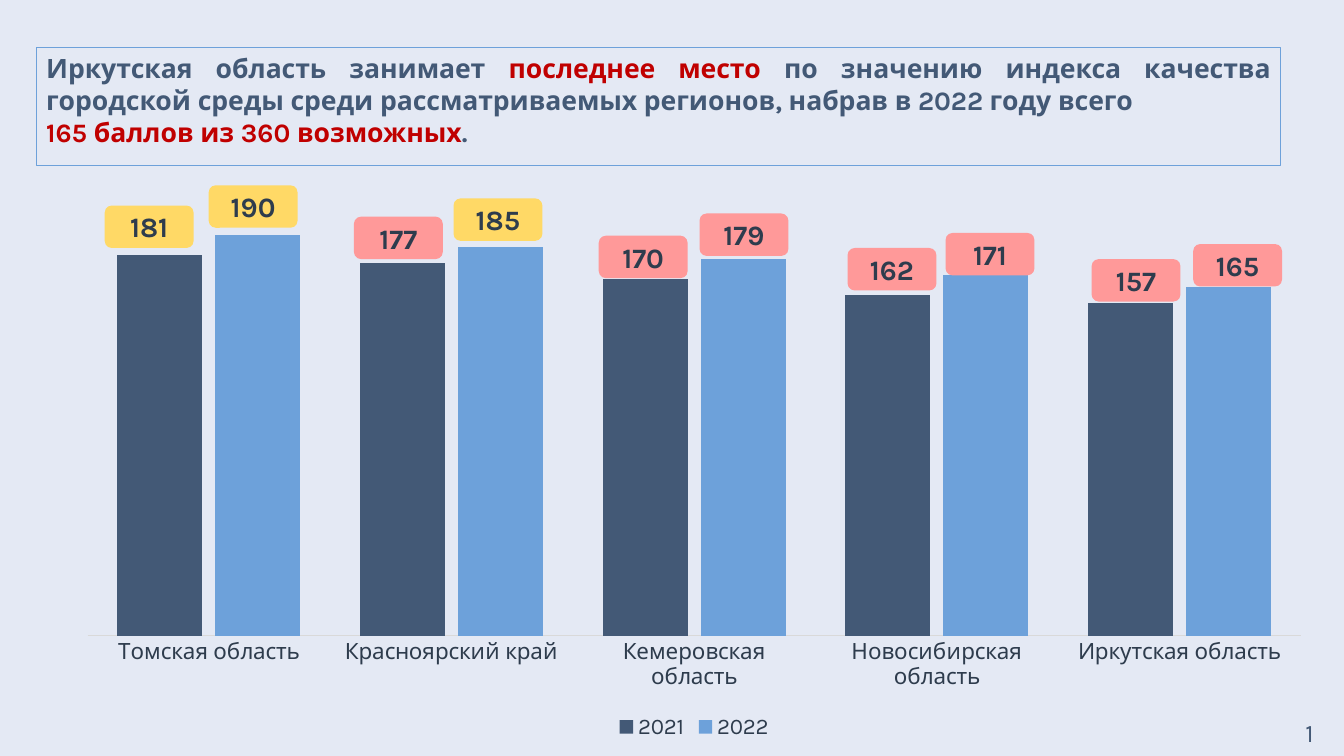
from lxml import etree
from pptx import Presentation
from pptx.chart.data import CategoryChartData
from pptx.dml.color import RGBColor
from pptx.enum.chart import XL_CHART_TYPE as ChartType
from pptx.enum.chart import XL_LEGEND_POSITION as LegendPosition
from pptx.enum.chart import XL_TICK_MARK as TickMark
from pptx.enum.shapes import MSO_SHAPE as Shape
from pptx.enum.text import MSO_ANCHOR as Anchor
from pptx.enum.text import PP_ALIGN as Align
from pptx.oxml import parse_xml
from pptx.oxml.ns import nsdecls, qn
from pptx.util import Cm, Pt

FONT = "Karla"
BACKGROUND = RGBColor(0xE4, 0xE9, 0xF4)
NAVY = RGBColor(0x43, 0x59, 0x76)
BLUE = RGBColor(0x6D, 0xA1, 0xDA)
DARK = RGBColor(0x2E, 0x3C, 0x4D)
RED = RGBColor(0xC0, 0x00, 0x00)
YELLOW = RGBColor(0xFF, 0xD9, 0x66)
PINK = RGBColor(0xFF, 0x99, 0x99)
AXIS_GREY = RGBColor(0xD9, 0xD9, 0xD9)

HEADLINE = [
    [
        ("Иркутская область занимает ", NAVY),
        ("последнее место ", RED),
        ("по значению индекса качества городской среды среди "
         "рассматриваемых регионов, набрав в 2022 году всего ", NAVY),
    ],
    [("165 баллов из 360 возможных", RED), (".", NAVY)],
]
REGIONS = ["Томская область", "Красноярский край", "Кемеровская область",
           "Новосибирская область", "Иркутская область"]
SERIES = [("2021", [95, 93, 89, 85, 83], NAVY),
          ("2022", [100, 97, 94, 90, 87], BLUE)]
SCORES = [
    (181, 1.07, 0.07), (190, 3.69, -0.44),
    (177, 7.35, 0.35), (185, 9.86, -0.11),
    (170, 13.52, 0.83), (179, 16.06, 0.27),
    (162, 19.79, 1.14), (171, 22.26, 0.76),
    (157, 25.94, 1.42), (165, 28.5, 1.04),
]
GOOD_SCORE = 180
PLOT_LAYOUT = {"x": 0.02, "y": 0.06, "w": 0.96, "h": 0.74}


def style_font(font, size, color, bold=False):
    """Apply the slide's typeface with a size and colour."""
    font.name = FONT
    font.size = Pt(size)
    font.bold = bold
    font.color.rgb = color


def add_run(paragraph, text, size, color, bold=False):
    """Append one formatted run to a paragraph."""
    run = paragraph.add_run()
    run.text = text
    style_font(run.font, size, color, bold)


def place_headline(slide, left, top, width, height):
    """Turn the title placeholder into the outlined headline box."""
    title = slide.shapes.title
    title.left, title.top = Cm(left), Cm(top)
    title.width, title.height = Cm(width), Cm(height)
    title.element.spPr.append(parse_xml(
        f'<a:prstGeom {nsdecls("a")} prst="roundRect"><a:avLst/></a:prstGeom>'))
    title.fill.background()
    title.line.color.rgb = BLUE
    title.line.width = Pt(0.75)
    frame = title.text_frame
    frame.word_wrap = True
    frame.vertical_anchor = Anchor.TOP
    for index, runs in enumerate(HEADLINE):
        paragraph = frame.add_paragraph() if index else frame.paragraphs[0]
        paragraph.alignment = Align.JUSTIFY
        for text, color in runs:
            add_run(paragraph, text, 19, color, bold=True)


def fix_plot_area(chart):
    """Pin the inner plot area to fractions of the chart."""
    plot_area = chart.element.chart.plotArea
    for old_layout in plot_area.findall(qn("c:layout")):
        plot_area.remove(old_layout)
    layout = etree.Element(qn("c:layout"))
    manual = etree.SubElement(layout, qn("c:manualLayout"))
    settings = {"layoutTarget": "inner", "xMode": "edge", "yMode": "edge", **PLOT_LAYOUT}
    for name, value in settings.items():
        etree.SubElement(manual, qn(f"c:{name}")).set("val", str(value))
    plot_area.insert(0, layout)


def add_index_chart(slide, left, top, width, height):
    """Add the clustered columns for both years."""
    data = CategoryChartData()
    data.categories = REGIONS
    for name, values, _ in SERIES:
        data.add_series(name, values)
    chart = slide.shapes.add_chart(ChartType.COLUMN_CLUSTERED, Cm(left), Cm(top),
                                   Cm(width), Cm(height), data).chart
    style_font(chart.font, 16, DARK)
    chart.has_title = False
    chart.has_legend = True
    chart.legend.position = LegendPosition.BOTTOM
    chart.legend.include_in_layout = False
    style_font(chart.legend.font, 16, DARK)

    plot = chart.plots[0]
    plot.gap_width = 70
    plot.overlap = -15
    plot.vary_by_categories = False
    for series, (_, _, color) in zip(plot.series, SERIES):
        series.format.fill.solid()
        series.format.fill.fore_color.rgb = color

    value_axis = chart.value_axis
    value_axis.minimum_scale = 0
    value_axis.maximum_scale = 100
    value_axis.has_major_gridlines = False
    value_axis.visible = False

    category_axis = chart.category_axis
    category_axis.major_tick_mark = TickMark.NONE
    category_axis.minor_tick_mark = TickMark.NONE
    category_axis.format.line.color.rgb = AXIS_GREY
    category_axis.format.line.width = Pt(0.75)
    style_font(category_axis.tick_labels.font, 16, DARK)
    fix_plot_area(chart)


def add_score_badges(slide, left, top, width, height):
    """Place the score badges relative to the chart's corner."""
    for score, offset_x, offset_y in SCORES:
        badge = slide.shapes.add_shape(Shape.ROUNDED_RECTANGLE, Cm(left + offset_x),
                                       Cm(top + offset_y), Cm(width), Cm(height))
        badge.shadow.inherit = False
        badge.fill.solid()
        badge.fill.fore_color.rgb = YELLOW if score >= GOOD_SCORE else PINK
        badge.line.fill.background()
        badge.text_frame.vertical_anchor = Anchor.MIDDLE
        paragraph = badge.text_frame.paragraphs[0]
        paragraph.alignment = Align.CENTER
        add_run(paragraph, str(score), 20, DARK, bold=True)


def add_page_number(slide, left, top, width, height):
    """Add the page number in the corner."""
    box = slide.shapes.add_textbox(Cm(left), Cm(top), Cm(width), Cm(height))
    box.text_frame.word_wrap = True
    box.text_frame.vertical_anchor = Anchor.MIDDLE
    paragraph = box.text_frame.paragraphs[0]
    paragraph.alignment = Align.CENTER
    add_run(paragraph, "1", 18, NAVY)


def main():
    """Build and save the presentation."""
    presentation = Presentation()
    presentation.slide_width = Cm(33.87)
    presentation.slide_height = Cm(19.05)
    slide = presentation.slides.add_slide(presentation.slide_layouts.get_by_name("Title Only"))
    slide.background.fill.solid()
    slide.background.fill.fore_color.rgb = BACKGROUND
    place_headline(slide, 0.91, 1.19, 31.37, 2.97)
    add_index_chart(slide, 1.57, 5.11, 31.85, 13.64)
    add_score_badges(slide, 1.57, 5.11, 2.24, 1.07)
    add_page_number(slide, 32.46, 17.96, 1.09, 0.97)
    presentation.save("out.pptx")


if __name__ == "__main__":
    main()
